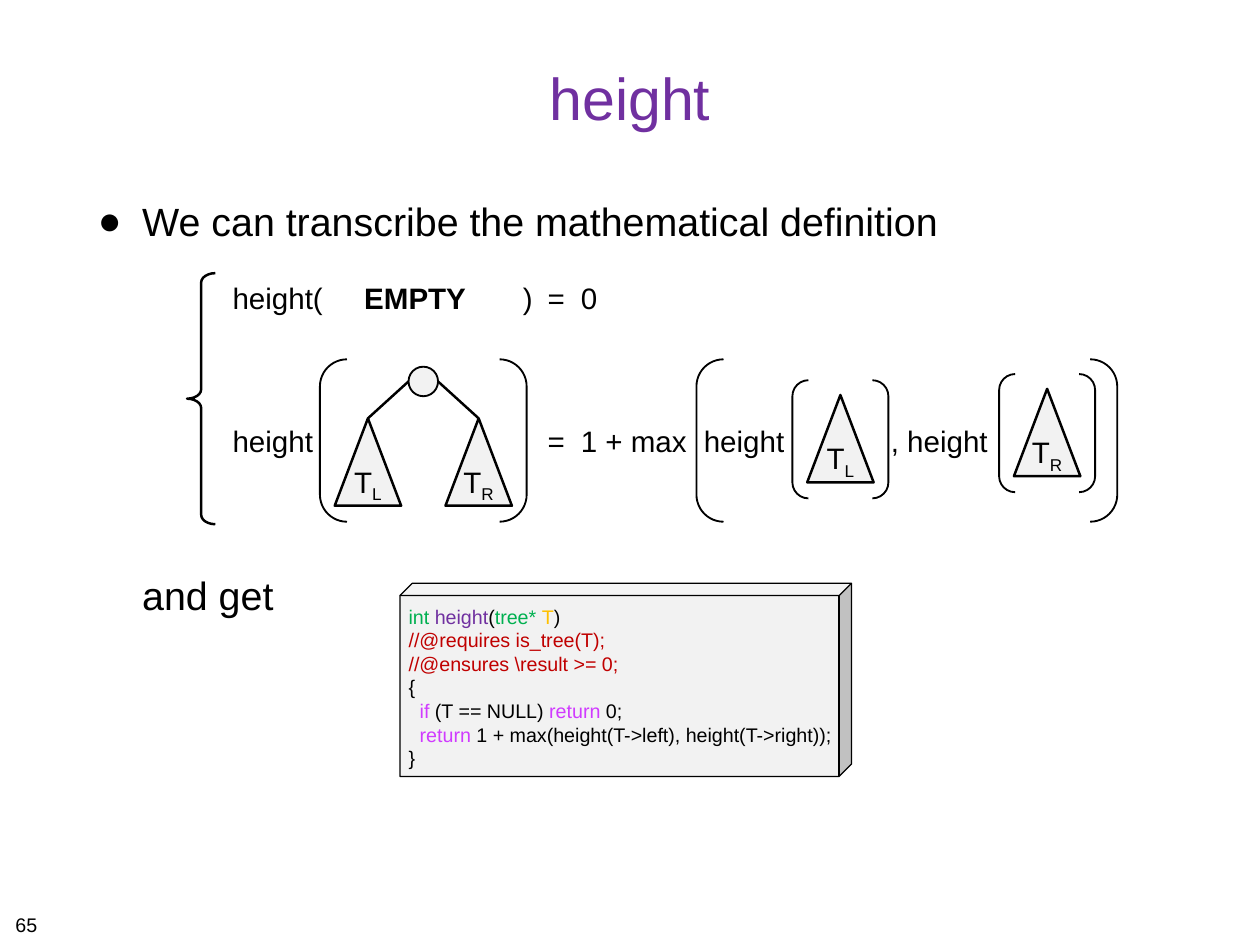
from lxml.etree import SubElement
from pptx import Presentation
from pptx.dml.color import RGBColor
from pptx.enum.shapes import MSO_CONNECTOR as Connector, MSO_SHAPE as Shape
from pptx.enum.text import MSO_ANCHOR as Anchor, MSO_AUTO_SIZE as AutoSize, PP_ALIGN as Align
from pptx.oxml.ns import qn
from pptx.util import Pt

COLORS = {
    "text": "000000", "title": "7030A0", "panel": "F2F2F2", "type": "00B050",
    "name": "7030A0", "variable": "FFC000", "contract": "C00000", "keyword": "D03BFF",
}
TREE_WIDTH, TREE_HEIGHT = 54, 71
FRAME = {"word_wrap": False, "auto_size": AutoSize.NONE, "vertical_anchor": Anchor.TOP}

DEFINITION = [
    ([("height(\t", False), ("EMPTY", True), ("\t)\t=\t0", False)], (107, 236, 256, 283), 0),
    ([("height\t=\t1 + max\theight\t, height", False)], (256, 283, 383, 535), 87),
]
CODE = [
    (0, [("int ", "type"), ("height", "name"), ("(", "text"), ("tree* ", "type"),
         ("T", "variable"), (")", "text")]),
    (0, [("//@requires is_tree(T);", "contract")]),
    (0, [("//@ensures \\result >= 0;", "contract")]),
    (0, [("{", "text")]),
    (9, [("if ", "keyword"), ("(T == NULL) ", "text"), ("return", "keyword"), (" 0;", "text")]),
    (9, [("return", "keyword"), (" 1 + max(height(T->left), height(T->right));", "text")]),
    (0, [("}", "text")]),
]


def apply_format(target, values):
    """Set every attribute named in values on target."""
    for name, value in values.items():
        setattr(target, name, value)


def set_frame(frame, margins, **values):
    """Format a text frame with left, top, right and bottom margins."""
    sides = ("margin_left", "margin_top", "margin_right", "margin_bottom")
    apply_format(frame, {**FRAME, **dict(zip(sides, map(Pt, margins))), **values})


def add_run(paragraph, text, size, color="text", bold=False):
    """Append formatted text to a paragraph and return its run."""
    run = paragraph.add_run()
    run.text = text
    apply_format(run.font, {"name": "Arial", "size": Pt(size), "bold": bold})
    run.font.color.rgb = RGBColor.from_string(COLORS[color])
    return run


def next_paragraph(frame, index):
    """Return the first paragraph of a frame or add another one."""
    return frame.add_paragraph() if index else frame.paragraphs[0]


def place(shape, box):
    """Move and size a shape to a box in points."""
    apply_format(shape, dict(zip(("left", "top", "width", "height"), map(Pt, box))))


def style_line(shape, width):
    """Give a shape or connector a solid black line."""
    shape.line.width = Pt(width)
    shape.line.color.rgb = RGBColor.from_string(COLORS["text"])


def add_outline(slide, kind, box, width, filled=False):
    """Add a black-lined preset shape, with or without the panel fill."""
    shape = slide.shapes.add_shape(kind, *map(Pt, box))
    shape.shadow.inherit = False
    style_line(shape, width)
    if filled:
        shape.fill.solid()
        shape.fill.fore_color.rgb = RGBColor.from_string(COLORS["panel"])
    else:
        shape.fill.background()
    return shape


def add_subtree(slide, left, top, side):
    """Add a triangle labelled T with its side as a subscript."""
    box = (left, top, TREE_WIDTH, TREE_HEIGHT)
    triangle = add_outline(slide, Shape.ISOSCELES_TRIANGLE, box, 2, True)
    set_frame(triangle.text_frame, (0, 7.2, 0, 7.2), vertical_anchor=Anchor.MIDDLE)
    paragraph = triangle.text_frame.paragraphs[0]
    paragraph.alignment = Align.CENTER
    add_run(paragraph, "T", 24)
    subscript = add_run(paragraph, side, 24)
    subscript._r.get_or_add_rPr().set("baseline", "-25000")
    return triangle


def add_tree(slide, box):
    """Add a bracketed root node joined to its two subtrees."""
    left, top, width, height = box
    center, diameter = left + width / 2, 24
    node_top = top + 6
    for direction, side in ((-1, "L"), (1, "R")):
        subtree_left = center + direction * 45 - TREE_WIDTH / 2
        triangle = add_subtree(slide, subtree_left, top + 48, side)
        start = Pt(center + direction * diameter / 2), Pt(node_top + diameter / 2)
        branch = slide.shapes.add_connector(Connector.STRAIGHT, *start, *start)
        branch.end_connect(triangle, 0)
        style_line(branch, 2)
        SubElement(branch._element.spPr, qn("a:effectLst"))
    add_outline(slide, Shape.OVAL, (center - diameter / 2, node_top, diameter, diameter), 1.5, True)
    add_outline(slide, Shape.DOUBLE_BRACKET, box, 1.5)


def add_argument(slide, left, top, side):
    """Add a subtree enclosed in brackets."""
    add_subtree(slide, left + 12, top + 12, side)
    add_outline(slide, Shape.DOUBLE_BRACKET, (left, top, 78, 96), 1.5)


def add_definition(slide, box):
    """Add the two-case definition of height."""
    left, top, width, height = box
    brace = add_outline(slide, Shape.LEFT_BRACE, (left, top, 23, height), 2)
    brace.adjustments[0] = 0.33
    text_box = slide.shapes.add_textbox(*map(Pt, (left + 37, top + 5.6, width - 37, 142)))
    set_frame(text_box.text_frame, (0, 0, 0, 0))
    for index, (runs, stops, gap) in enumerate(DEFINITION):
        paragraph = next_paragraph(text_box.text_frame, index)
        paragraph.space_before = Pt(gap)
        tabs = SubElement(paragraph._p.get_or_add_pPr(), qn("a:tabLst"))
        for stop in stops:
            SubElement(tabs, qn("a:tab"), pos=str(Pt(stop)), algn="l")
        for text, bold in runs:
            add_run(paragraph, text, 24, bold=bold)
    add_tree(slide, (left + 108, top + 70, 168, 132))
    add_argument(slide, left + 492, top + 87, "L")
    add_argument(slide, left + 660, top + 82, "R")
    add_outline(slide, Shape.DOUBLE_BRACKET, (left + 414, top + 70, 342, 132), 1.5)


def add_code(slide, box):
    """Add the code listing on the front of a cube."""
    cube = add_outline(slide, Shape.CUBE, box, 1, True)
    cube.adjustments[0] = 0.064
    set_frame(cube.text_frame, (7.2, 7.2, 4.5, 4.5))
    for index, (indent, runs) in enumerate(CODE):
        paragraph = next_paragraph(cube.text_frame, index)
        paragraph.alignment = Align.LEFT
        paragraph._p.get_or_add_pPr().set("marL", str(Pt(indent)))
        for text, color in runs:
            add_run(paragraph, text, 16, color)


def fill_title(slide, box):
    """Fill the title placeholder."""
    title = slide.shapes.title
    place(title, box)
    set_frame(title.text_frame, [4.5] * 4, word_wrap=True, vertical_anchor=Anchor.MIDDLE)
    paragraph = title.text_frame.paragraphs[0]
    paragraph.alignment = Align.CENTER
    add_run(paragraph, "height", 48, "title")


def fill_body(slide, box):
    """Fill the body placeholder with the statement and its continuation."""
    body = slide.placeholders[1]
    place(body, box)
    set_frame(body.text_frame, [4.5] * 4, word_wrap=True)
    items = [("We can transcribe the mathematical definition", 8, -36), ("and get", 265, 0)]
    for index, (text, gap, indent) in enumerate(items):
        paragraph = next_paragraph(body.text_frame, index)
        paragraph.space_before = Pt(gap)
        properties = paragraph._p.get_or_add_pPr()
        properties.set("marL", str(Pt(36)))
        properties.set("indent", str(Pt(indent)))
        if indent:
            SubElement(properties, qn("a:buChar"), char="●")
        else:
            SubElement(properties, qn("a:buNone"))
        add_run(paragraph, text, 32)


def add_page_number(slide, box):
    """Add the page number."""
    number = slide.shapes.add_textbox(*map(Pt, box))
    set_frame(number.text_frame, [4.5] * 4)
    add_run(number.text_frame.paragraphs[0], "65", 16)


def main():
    """Build and save the slide."""
    presentation = Presentation()
    apply_format(presentation, {"slide_width": Pt(1024), "slide_height": Pt(768)})
    slide = presentation.slides.add_slide(presentation.slide_layouts[1])
    fill_title(slide, (75, 20, 874, 118))
    fill_body(slide, (75, 156, 874, 543))
    add_code(slide, (325, 474, 367, 157))
    add_definition(slide, (152, 222, 757, 204))
    add_page_number(slide, (8, 737, 27, 25))
    presentation.save("out.pptx")


if __name__ == "__main__":
    main()
